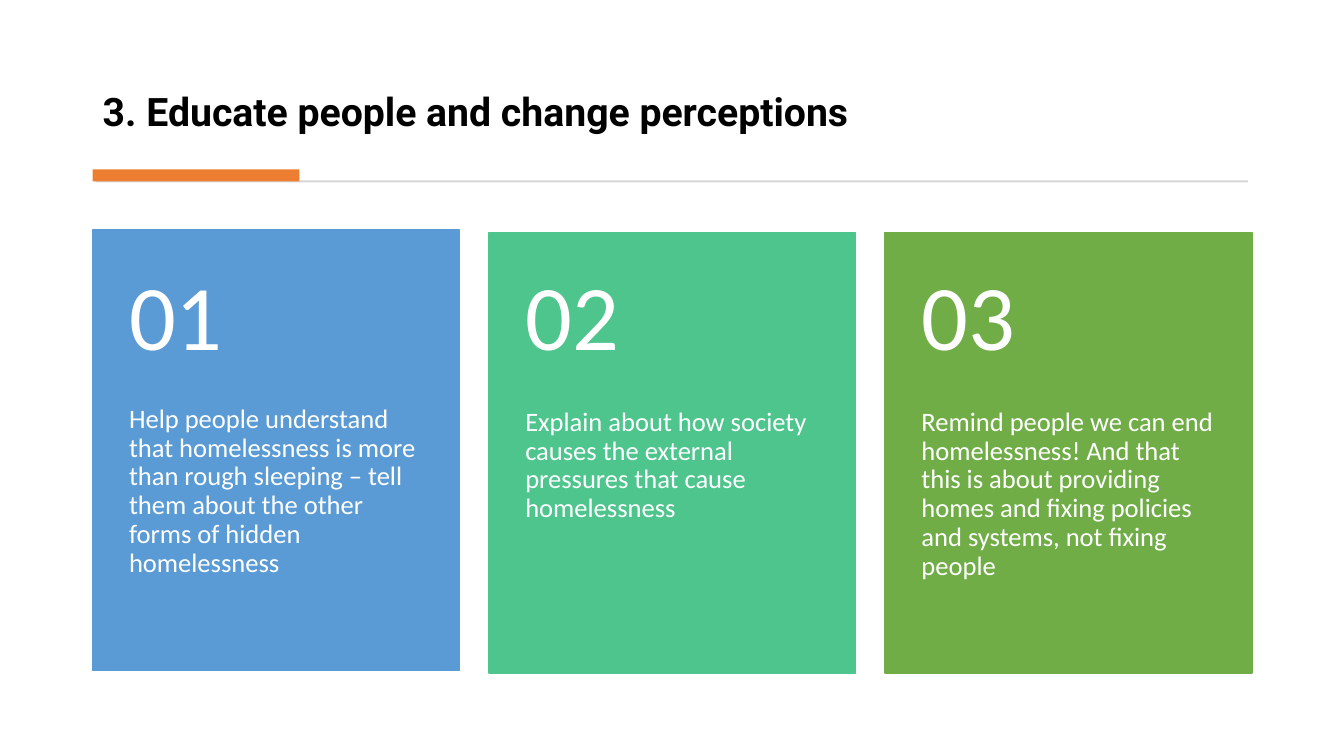
from dataclasses import dataclass

from pptx import Presentation
from pptx.dml.color import RGBColor
from pptx.enum.shapes import MSO_SHAPE
from pptx.enum.text import MSO_ANCHOR, MSO_AUTO_SIZE, PP_ALIGN
from pptx.util import Pt

RECTANGLE = MSO_SHAPE.RECTANGLE
TOP, MIDDLE, BOTTOM = MSO_ANCHOR.TOP, MSO_ANCHOR.MIDDLE, MSO_ANCHOR.BOTTOM
LEFT = PP_ALIGN.LEFT
NO_AUTOFIT = MSO_AUTO_SIZE.NONE
TITLE_ONLY = 5


@dataclass(frozen=True)
class Theme:
    heading_font: str = "Roboto"
    body_font: str = "Calibri"
    title_size: float = 28
    number_size: float = 66
    body_size: float = 19
    black: str = "000000"
    white: str = "FFFFFF"
    rule: str = "D5D5D5"
    accent: str = "ED7D31"
    blue: str = "5B9BD5"
    mint: str = "4DC58D"
    green: str = "70AD47"


class SlideBuilder:
    def __init__(self, page, theme):
        self.page = page
        self.theme = theme

    def place(self, shape, left, top, width, height):
        shape.left, shape.top = Pt(left), Pt(top)
        shape.width, shape.height = Pt(width), Pt(height)

    def set_text(self, frame, text, font, size, color, anchor, bold=False):
        frame.text = text
        frame.word_wrap = True
        frame.auto_size = NO_AUTOFIT
        frame.vertical_anchor = anchor
        para = frame.paragraphs[0]
        para.alignment = LEFT
        para.line_spacing = 0.9
        span = para.runs[0]
        span.font.name = font
        span.font.size = Pt(size)
        span.font.bold = bold
        span.font.color.rgb = RGBColor.from_string(color)

    def title(self, text, *area):
        box = self.page.shapes.title
        self.place(box, *area)
        self.set_text(box.text_frame, text, self.theme.heading_font,
                      self.theme.title_size, self.theme.black, BOTTOM, bold=True)
        box.text_frame.paragraphs[0].space_after = Pt(6)

    def rectangle(self, color, *area, outline=0):
        box = self.page.shapes.add_shape(RECTANGLE, *map(Pt, area))
        box.shadow.inherit = False
        box.fill.solid()
        box.fill.fore_color.rgb = RGBColor.from_string(color)
        if outline:
            box.line.color.rgb = RGBColor.from_string(color)
            box.line.width = Pt(outline)
        else:
            box.line.fill.background()

    def text(self, text, size, anchor, insets, *area):
        box = self.page.shapes.add_textbox(*map(Pt, area))
        frame = box.text_frame
        self.set_text(frame, text, self.theme.body_font, size, self.theme.white, anchor)
        frame.margin_left = frame.margin_right = Pt(26)
        frame.margin_top, frame.margin_bottom = map(Pt, insets)

    def card(self, number, text, color, left, top):
        width = 262
        self.rectangle(color, left, top, width, 314.6, outline=1)
        self.text(text, self.theme.body_size, TOP, (0, 26),
                  left, top + 125.5, width, 189)
        self.text(f"{number:02}", self.theme.number_size, MIDDLE, (13, 13),
                  left, 166.3, width, 126)


def main():
    deck = Presentation()
    deck.slide_width, deck.slide_height = Pt(960), Pt(540)
    page = deck.slides.add_slide(deck.slide_layouts[TITLE_ONLY])
    theme = Theme()
    builder = SlideBuilder(page, theme)

    # Heading with its rule and accent bar
    builder.title("3. Educate people and change perceptions", 66.2, 20.2, 827.3, 80)
    builder.rectangle(theme.rule, 68.4, 128.9, 823, 1.4)
    builder.rectangle(theme.accent, 66.2, 121, 147.6, 8.6)

    # Three numbered cards, the first slightly higher
    cards = [
        ("Help people understand that homelessness is more than rough sleeping – "
         "tell them about the other forms of hidden homelessness", theme.blue, 164.2),
        ("Explain about how society causes the external pressures that cause "
         "homelessness", theme.mint, 166.3),
        ("Remind people we can end homelessness! And that this is about providing "
         "homes and fixing policies and systems, not fixing people", theme.green, 166.3),
    ]
    for index, (text, color, top) in enumerate(cards):
        builder.card(index + 1, text, color, 66.2 + index * 283, top)

    deck.save("out.pptx")


if __name__ == "__main__":
    main()
